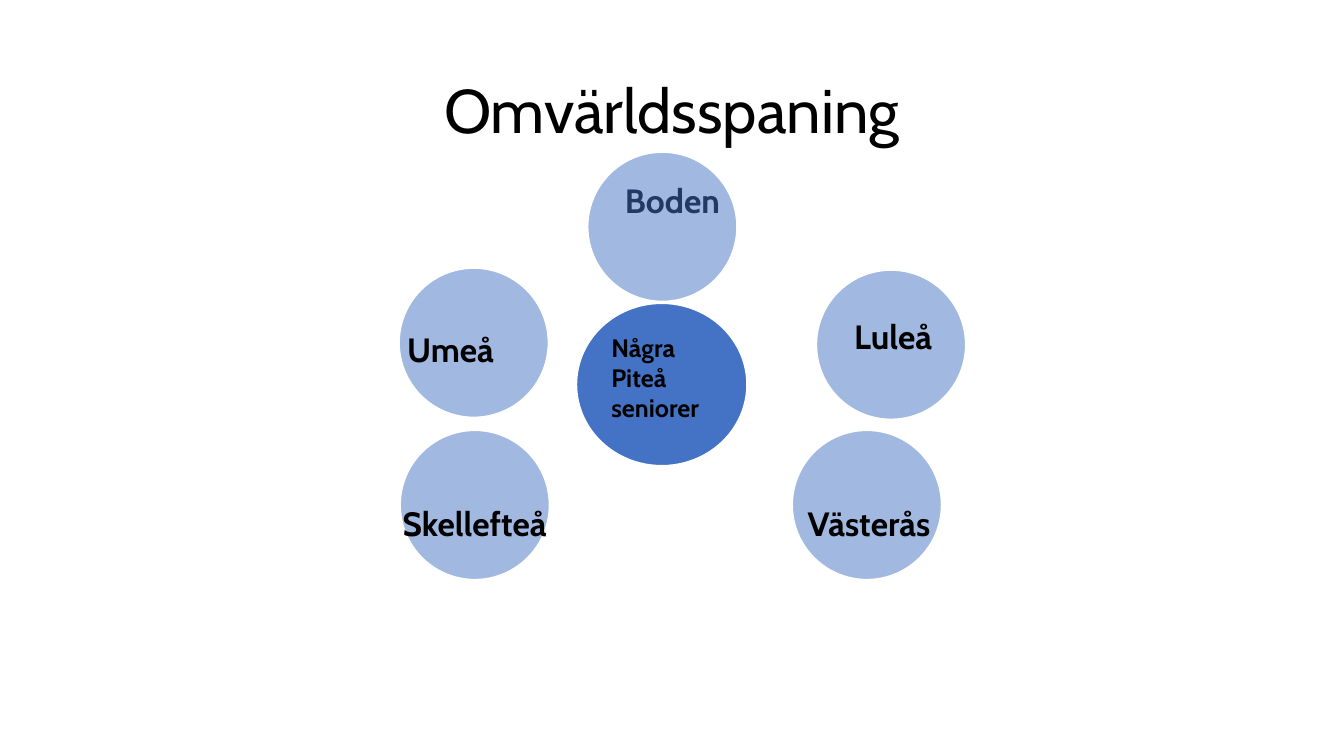
from dataclasses import dataclass

from lxml import etree
from pptx import Presentation
from pptx import util as u
from pptx.dml.color import RGBColor
from pptx.enum import shapes, text
from pptx.oxml.ns import qn


@dataclass(frozen=True)
class Theme:
    font: str = "Cabin"
    ink: RGBColor = RGBColor(0x00, 0x00, 0x00)
    blue: RGBColor = RGBColor(0x44, 0x72, 0xC4)
    outline: RGBColor = RGBColor(0xFF, 0xFF, 0xFF)
    title_size: int = 44
    town_size: int = 24
    hub_size: int = 18
    line_spacing: float = 0.9
    town_opacity: int = 50


@dataclass(frozen=True)
class Area:
    """A rectangle in percent of the slide's width and height."""
    left: float
    top: float
    width: float
    height: float


@dataclass(frozen=True)
class Circle:
    left: float
    top: float
    width: float = 11.1
    height: float = 19.73


@dataclass(frozen=True)
class Label:
    town: str
    left: float
    top: float
    width: float = 11.55
    height: float = 14.4


THEME = Theme()
SLIDE_WIDTH, SLIDE_HEIGHT = u.Inches(13.333), u.Inches(7.5)
TITLE = Area(12.5, 10.4, 75, 9.73)
HUB = Area(42.9, 40.13, 12.68, 21.47)

# From back to front: the Boden circle tints the Boden label beneath it.
TOWNS = [
    Circle(29.7, 35.47),
    Label("Boden", 43.58, 20.13, 12.9, 13.33),
    Circle(60.75, 35.73),
    Label("Luleå", 60.68, 37.6),
    Circle(58.95, 56.93),
    Label("Västerås", 58.88, 62.27),
    Circle(29.78, 56.93),
    Label("Skellefteå", 29.55, 62.27),
    Circle(43.73, 20.13),
    Label("Umeå", 27.75, 39.33),
]


def place(area: Area | Circle | Label) -> tuple[int, int, int, int]:
    """Turn percentages into slide lengths."""
    return (
        round(SLIDE_WIDTH * area.left / 100),
        round(SLIDE_HEIGHT * area.top / 100),
        round(SLIDE_WIDTH * area.width / 100),
        round(SLIDE_HEIGHT * area.height / 100),
    )


def write(frame, words: str, size: int, align, anchor, bold: bool = True):
    frame.word_wrap = True
    frame.vertical_anchor = anchor
    para = frame.paragraphs[0]
    para.text = words
    para.alignment = align
    para.font.name = THEME.font
    para.font.size = u.Pt(size)
    para.font.bold = bold
    para.font.color.rgb = THEME.ink
    return para


def add_circle(page, area: Area | Circle, opacity: int = 100):
    circle = page.shapes.add_shape(shapes.MSO_SHAPE.OVAL, *place(area))
    circle.shadow.inherit = False
    circle.fill.solid()
    circle.fill.fore_color.rgb = THEME.blue
    circle.line.color.rgb = THEME.outline
    circle.line.width = u.Pt(1)
    if opacity < 100:
        color = circle.fill._xPr.find(qn("a:solidFill"))[0]
        etree.SubElement(color, qn("a:alpha"), val=str(opacity * 1000))
    return circle


def add_label(page, label: Label) -> None:
    frame = page.shapes.add_textbox(*place(label)).text_frame
    frame.margin_left = frame.margin_right = 0
    frame.margin_top = frame.margin_bottom = 0
    para = write(frame, label.town, THEME.town_size,
                 text.PP_ALIGN.CENTER, text.MSO_ANCHOR.MIDDLE)
    para.line_spacing = THEME.line_spacing


def add_title(page, words: str) -> None:
    frame = page.shapes.add_textbox(*place(TITLE)).text_frame
    para = write(frame, words, THEME.title_size,
                 text.PP_ALIGN.CENTER, text.MSO_ANCHOR.BOTTOM, bold=False)
    para.line_spacing = THEME.line_spacing


def main() -> None:
    deck = Presentation()
    deck.slide_width, deck.slide_height = SLIDE_WIDTH, SLIDE_HEIGHT
    page = deck.slides.add_slide(deck.slide_layouts[6])

    add_title(page, "Omvärldsspaning")
    for item in TOWNS:
        if isinstance(item, Circle):
            add_circle(page, item, THEME.town_opacity)
        else:
            add_label(page, item)
    hub = add_circle(page, HUB)
    write(hub.text_frame, "Några Piteå seniorer", THEME.hub_size,
          text.PP_ALIGN.LEFT, text.MSO_ANCHOR.TOP)

    deck.save("out.pptx")


if __name__ == "__main__":
    main()
